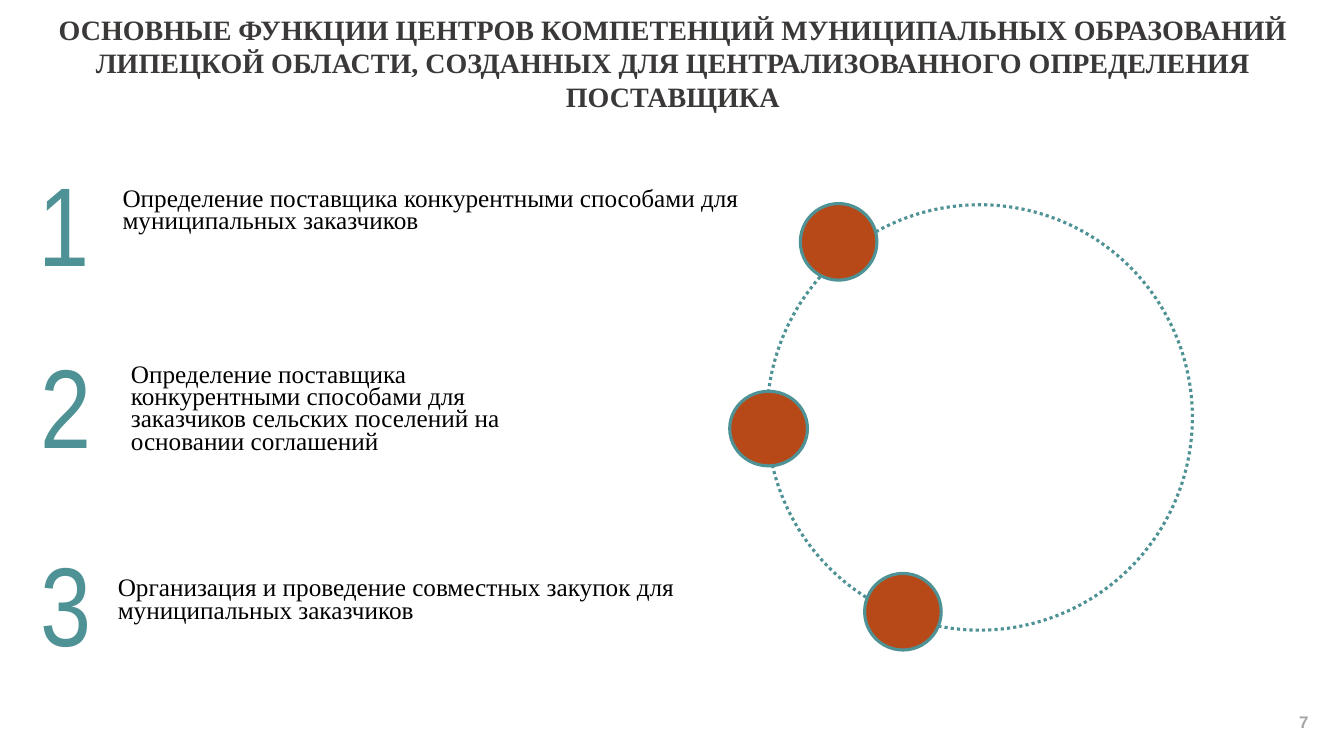
from pptx import Presentation
from pptx.dml.color import RGBColor
from pptx.enum import dml, shapes, text
from pptx.util import Cm, Pt

COLOURS = {"teal": "4F9295", "rust": "B74919", "title": "3B3838",
           "body": "000000", "page": "A6A6A6"}
SERIF = "Times New Roman"

TITLE = ("ОСНОВНЫЕ ФУНКЦИИ ЦЕНТРОВ КОМПЕТЕНЦИЙ МУНИЦИПАЛЬНЫХ ОБРАЗОВАНИЙ "
         "ЛИПЕЦКОЙ ОБЛАСТИ, СОЗДАННЫХ ДЛЯ ЦЕНТРАЛИЗОВАННОГО ОПРЕДЕЛЕНИЯ ПОСТАВЩИКА")
PAGE_NUMBER = "7"

FUNCTIONS = [
    {"text": "Определение поставщика конкурентными способами для муниципальных заказчиков",
     "number_at": (0.72, 3.78), "text_at": (2.84, 4.67, 16.94, 1.4)},
    {"text": "Определение поставщика конкурентными способами для заказчиков "
             "сельских поселений на основании соглашений",
     "number_at": (0.76, 8.36), "text_at": (3.05, 9.09, 11.43, 3.3)},
    {"text": "Организация и проведение совместных закупок для муниципальных заказчиков",
     "number_at": (0.78, 13.34), "text_at": (2.72, 14.48, 16.94, 1.4)},
]
NUMBER_SIZE = (1.78, 3.68)

RING = (19.33, 5.16, 10.72, 10.72)
DOTS = [(20.17, 5.13, 1.93, 1.93), (21.79, 14.45, 1.93, 1.93), (18.39, 9.86, 1.96, 1.88)]

deck = Presentation()
deck.slide_width, deck.slide_height = Cm(33.87), Cm(19.05)
page = deck.slides.add_slide(deck.slide_layouts[6])


def colour(name):
    return RGBColor.from_string(COLOURS[name])


def add_text(words, at, size, ink, font=SERIF, bold=False, align=None, spacing=None):
    box = page.shapes.add_textbox(*map(Cm, at))
    frame = box.text_frame
    frame.word_wrap = True
    frame.auto_size = text.MSO_AUTO_SIZE.SHAPE_TO_FIT_TEXT
    para = frame.paragraphs[0]
    para.alignment = align
    if spacing:
        para.line_spacing = Pt(spacing)
    span = para.add_run()
    span.text = words
    span.font.name, span.font.size, span.font.bold = font, Pt(size), bold
    span.font.color.rgb = colour(ink)


def add_circle(at, fill=None, dash=None):
    circle = page.shapes.add_shape(shapes.MSO_SHAPE.OVAL, *map(Cm, at))
    circle.shadow.inherit = False
    if fill:
        circle.fill.solid()
        circle.fill.fore_color.rgb = colour(fill)
    else:
        circle.fill.background()
    circle.line.color.rgb = colour("teal")
    circle.line.width = Pt(2.25)
    if dash:
        circle.line.dash_style = dash


add_circle(RING, dash=dml.MSO_LINE.ROUND_DOT)
for dot in DOTS:
    add_circle(dot, fill="rust")

for number, function in enumerate(FUNCTIONS, start=1):
    add_text(str(number), function["number_at"] + NUMBER_SIZE, 80, "teal", font="Arial Narrow")
    add_text(function["text"], function["text_at"], 18, "body", spacing=16)

add_text(TITLE, (0.23, 0.18, 33.45, 2.82), 20, "title", bold=True, align=text.PP_ALIGN.CENTER)
add_text(PAGE_NUMBER, (32.49, 17.81, 1.4, 0.76), 12, "page", font="Arial", bold=True)

deck.save("out.pptx")
